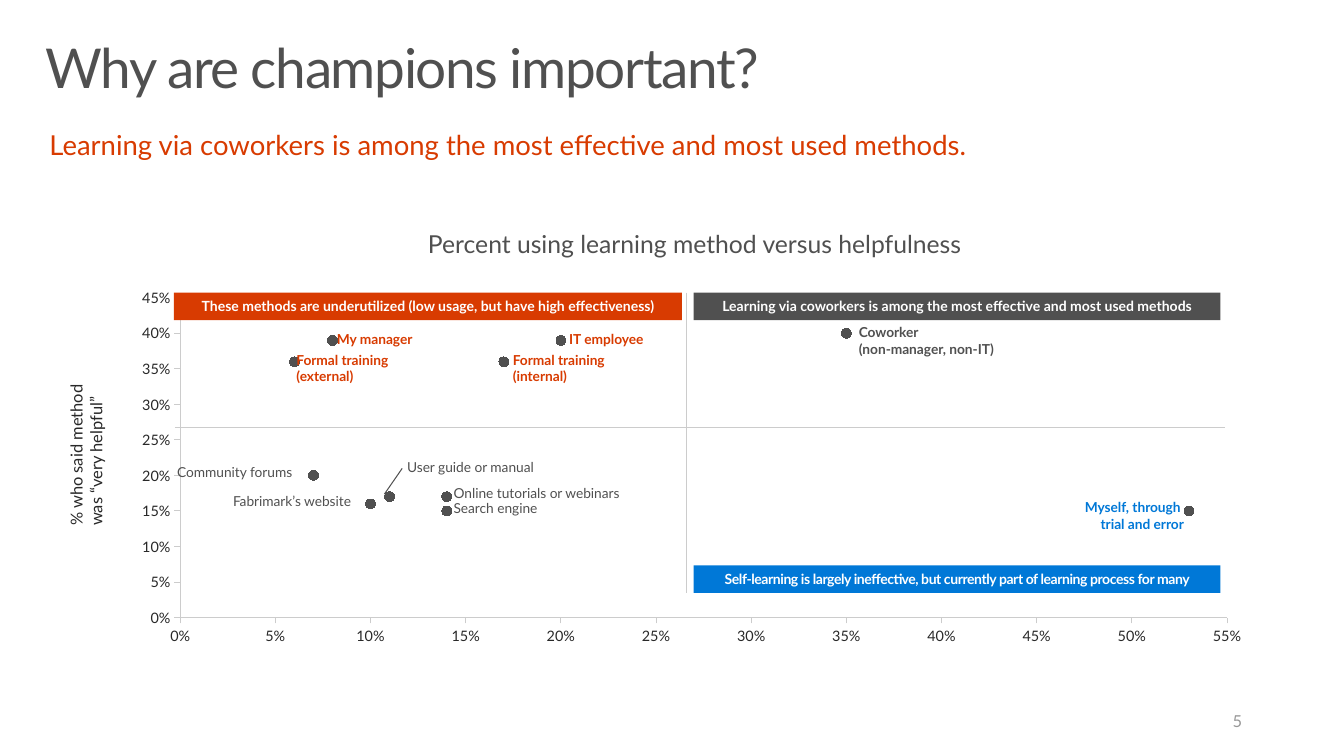
from lxml import etree
from pptx import Presentation
from pptx.chart.data import XyChartData
from pptx.dml.color import RGBColor
from pptx.enum.chart import XL_CHART_TYPE, XL_MARKER_STYLE, XL_TICK_MARK
from pptx.enum.shapes import MSO_CONNECTOR, MSO_SHAPE
from pptx.enum.text import MSO_ANCHOR, MSO_AUTO_SIZE, PP_ALIGN
from pptx.oxml import parse_xml
from pptx.oxml.ns import nsdecls, qn
from pptx.util import Pt

PX = 9144  # 100 px to the inch
LEFT, MID, RIGHT = PP_ALIGN.LEFT, PP_ALIGN.CENTER, PP_ALIGN.RIGHT
TOP, MIDDLE = MSO_ANCHOR.TOP, MSO_ANCHOR.MIDDLE
SCATTER, CIRCLE = XL_CHART_TYPE.XY_SCATTER, XL_MARKER_STYLE.CIRCLE
OUT, NONE = XL_TICK_MARK.OUTSIDE, XL_TICK_MARK.NONE
RECT, LINE = MSO_SHAPE.RECTANGLE, MSO_CONNECTOR.STRAIGHT
FIXED = MSO_AUTO_SIZE.NONE
FONT = "Lato"
GRAY, RED, BLUE, RULE, INK = "505050", "D83B01", "0078D7", "CCCCCC", "282828"


def rgb(code):
    return RGBColor.from_string(code)


def put(shape, text, size, color, bold=False, align=LEFT, anchor=TOP,
        pad=(0, 0), lead=None, track=0):
    frame = shape.text_frame
    frame.text = text
    frame.word_wrap = True
    frame.auto_size = FIXED
    frame.vertical_anchor = anchor
    frame.margin_left = frame.margin_right = pad[0] * PX
    frame.margin_top = frame.margin_bottom = pad[1] * PX
    for para in frame.paragraphs:
        para.alignment = align
        para.space_before = Pt(0)
        if lead:
            para.line_spacing = lead
        for run in para.runs:
            font = run.font
            font.name, font.size, font.bold = FONT, Pt(size), bold
            font.color.rgb = rgb(color)
            if track:
                font._element.set("spc", str(track))


prs = Presentation()
prs.slide_width, prs.slide_height = 1360 * PX, 765 * PX
slide = prs.slides.add_slide(prs.slide_layouts[1])
shapes = slide.shapes

# Title and lead sentence
title, body = slide.placeholders
title.left, title.top, title.width, title.height = [n * PX for n in (30, 32, 1300, 100)]
put(title, "Why are champions important?", 40, GRAY, pad=(16, 10), lead=0.9, track=-100)

body.left, body.top, body.width, body.height = [n * PX for n in (30, 110, 1245, 69)]
body.text_frame.text = ""
put(body, "Learning via coworkers is among the most effective and most used methods.",
    20, RED, pad=(20, 16), lead=1.1)
props = body.text_frame.paragraphs[0]._p.get_or_add_pPr()
props.set("marL", "0")
props.set("indent", "0")
etree.SubElement(props, qn("a:buNone"))

# Scatter chart: share using each method, share finding it very helpful
points = [(0.35, 0.40), (0.08, 0.39), (0.20, 0.39), (0.14, 0.17),
          (0.14, 0.15), (0.07, 0.20), (0.10, 0.16), (0.17, 0.36),
          (0.06, 0.36), (0.11, 0.17), (0.53, 0.15)]
data = XyChartData(number_format="0%")
series = data.add_series("Series 1")
for x, y in points:
    series.add_data_point(x, y)
chart = shapes.add_chart(SCATTER, 121 * PX, 285 * PX, 1159 * PX, 374 * PX, data).chart
chart.has_legend = chart.has_title = False
chart.font.name, chart.font.size = FONT, Pt(10.5)
chart.font.color.rgb = rgb(INK)
plot = chart.plots[0]
plot.vary_by_categories = False
dots = plot.series[0]
dots.smooth = False
dots.format.line.fill.background()
dots.marker.style, dots.marker.size = CIRCLE, 7
for part in (dots.marker.format.fill, dots.marker.format.line.fill):
    part.solid()
    part.fore_color.rgb = rgb(GRAY)

for axis, top in ((chart.category_axis, 0.55), (chart.value_axis, 0.45)):
    axis.minimum_scale, axis.maximum_scale, axis.major_unit = 0, top, 0.05
    axis.has_major_gridlines = axis.has_minor_gridlines = False
    axis.major_tick_mark, axis.minor_tick_mark = OUT, NONE
    axis.tick_labels.number_format = "0%"
    axis.tick_labels.number_format_is_linked = False
    axis.format.line.color.rgb = rgb(RULE)
    axis.format.line.width = Pt(0.75)

# Fixed inner plot area
area = chart._chartSpace.chart.plotArea
for old in area.findall(qn("c:layout")):
    area.remove(old)
area.insert(0, parse_xml(
    f'<c:layout {nsdecls("c")}><c:manualLayout><c:layoutTarget val="inner"/>'
    '<c:xMode val="edge"/><c:yMode val="edge"/><c:x val="0.053"/><c:y val="0.044"/>'
    '<c:w val="0.914"/><c:h val="0.865"/></c:manualLayout></c:layout>'))

# Quadrant rules and the leader to the user guide point
for x1, y1, x2, y2, color in ((695, 296, 695, 600, RULE),
                              (177, 433, 1240, 433, RULE),
                              (389, 500, 407, 474, GRAY)):
    line = shapes.add_connector(LINE, x1 * PX, y1 * PX, x2 * PX, y2 * PX)
    line.line.color.rgb = rgb(color)
    line.line.width = Pt(0.75)
    etree.SubElement(line._element.spPr, qn("a:effectLst"))

# Quadrant banners
banners = [
    (702, 572, 533, BLUE, -30, "Self-learning is largely ineffective, "
     "but currently part of learning process for many"),
    (702, 296, 533, GRAY, 0,
     "Learning via coworkers is among the most effective and most used methods"),
    (176, 296, 514, RED, 0,
     "These methods are underutilized (low usage, but have high effectiveness)"),
]
for x, y, w, color, track, text in banners:
    bar = shapes.add_shape(RECT, x * PX, y * PX, w * PX, 28 * PX)
    bar.shadow.inherit = False
    bar.fill.solid()
    bar.fill.fore_color.rgb = rgb(color)
    bar.line.fill.background()
    put(bar, text, 10.2, "FFFFFF", True, MID, MIDDLE, track=track)

# Point labels
labels = [
    (576, 335, 126, 17, "IT employee", RED, True, LEFT),
    (341, 335, 126, 17, "My manager", RED, True, LEFT),
    (300, 356, 126, 34, "Formal training (external)", RED, True, LEFT),
    (519, 356, 126, 34, "Formal training (internal)", RED, True, LEFT),
    (869, 328, 189, 34, "Coworker\n(non-manager, non-IT)", GRAY, True, LEFT),
    (1009, 505, 189, 34, "Myself, through \vtrial and error", BLUE, True, RIGHT),
    (154, 469, 167, 17, "Community forums", GRAY, False, MID),
    (212, 499, 167, 17, "Fabrimark’s website", GRAY, False, MID),
    (412, 464, 167, 17, "User guide or manual", GRAY, False, LEFT),
    (459, 491, 262, 17, "Online tutorials or webinars", GRAY, False, LEFT),
    (459, 506, 167, 17, "Search engine", GRAY, False, LEFT),
]
for x, y, w, h, text, color, bold, align in labels:
    box = shapes.add_textbox(x * PX, y * PX, w * PX, h * PX)
    put(box, text, 10, color, bold, align)

# Axis title, chart title and page number
box = shapes.add_textbox(-9 * PX, 421 * PX, 192 * PX, 50 * PX)
box.rotation = 270
put(box, "% who said method was “very helpful”", 12, INK, pad=(10, 5))

box = shapes.add_textbox(53 * PX, 220 * PX, 1300 * PX, 48 * PX)
put(box, "Percent using learning method versus helpfulness", 18, GRAY,
    align=MID, anchor=MIDDLE, pad=(5, 5), lead=1.14)

box = shapes.add_textbox(961 * PX, 709 * PX, 306 * PX, 41 * PX)
put(box, "5", 12, "989898", align=RIGHT, anchor=MIDDLE, pad=(10, 5))

prs.save("out.pptx")
